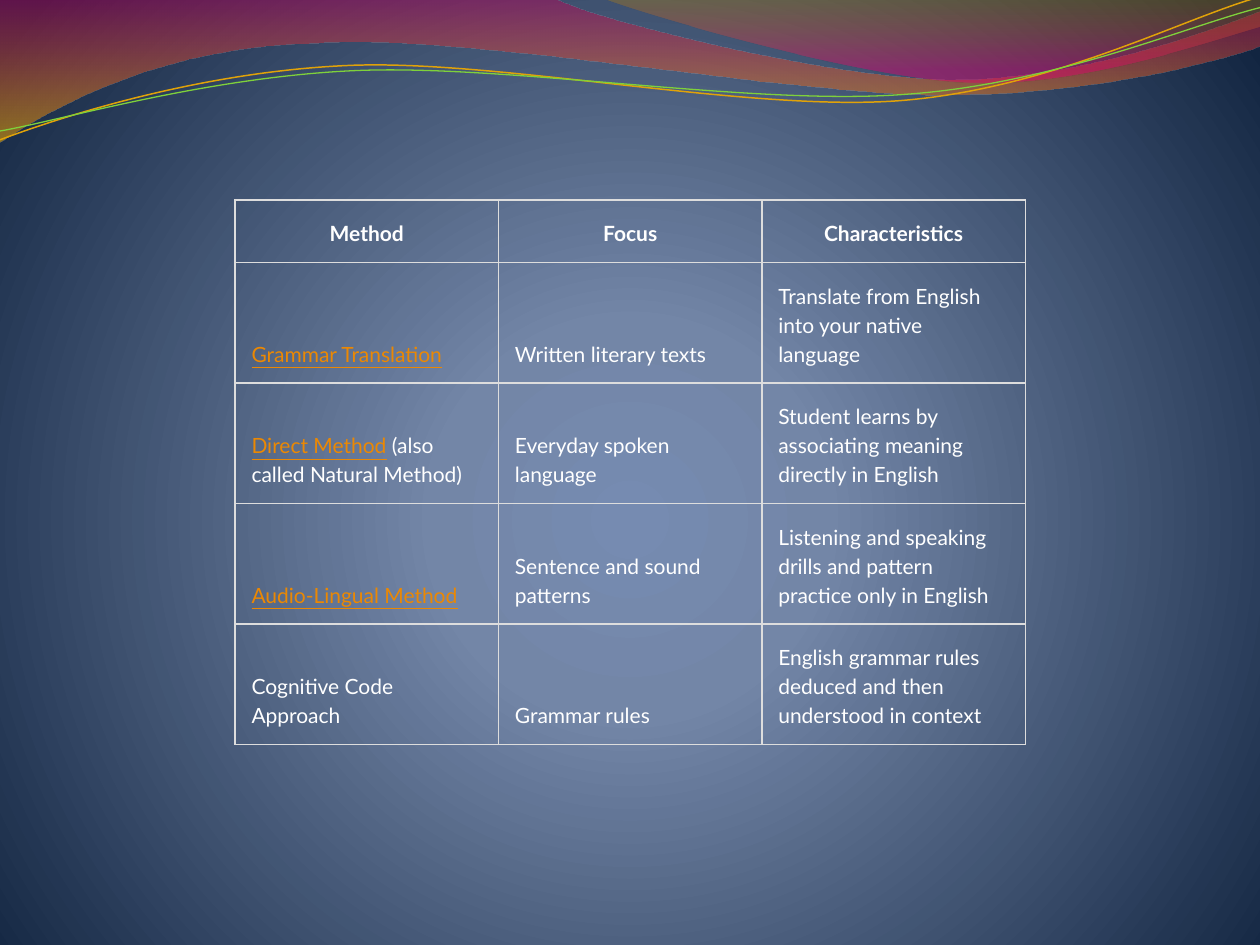
from dataclasses import dataclass
from math import cos, radians, sin

from lxml import etree
from pptx import Presentation
from pptx.dml.color import RGBColor
from pptx.enum.text import MSO_ANCHOR, PP_ALIGN
from pptx.oxml.ns import qn
from pptx.util import Cm, Pt

BOTTOM = MSO_ANCHOR.BOTTOM
CENTER, LEFT = PP_ALIGN.CENTER, PP_ALIGN.LEFT
BLANK_LAYOUT = 6
UNIT = Cm(2.54)  # wave coordinates count one tenth of the page width
CURVE_TILT = -2.7


@dataclass(frozen=True)
class Theme:
    font: str = "Lato"
    text_size: float = 12
    line_spacing: float = 1.15
    text: str = "FFFFFF"
    link: str = "EB8803"
    border: str = "DDDDDD"
    gold_line: str = "E0A209"
    green_line: str = "7FD13B"
    # Gradient stops: position, colour, opacity (all in percent)
    backdrop: tuple = ((0, "768BB1", 100), (25, "7386A7", 100), (100, "122541", 100))
    wide_wave: tuple = ((0, "BD0059", 45), (100, "F0AB00", 55))
    short_wave: tuple = ((0, "C38B00", 30), (80, "E1006B", 45))


THEME = Theme()

# Frames: left, top, width, height
WIDE_FRAME = (-0.01, -0.01, 10.02, 1.14)
SHORT_FRAME = (4.79, -0.01, 5.21, 0.7)
GOLD_FRAME = (-0.02, 0.22, 10.02, 0.71)
GREEN_FRAME = (-0.02, 0.3, 10.03, 0.58)

# Outlines: a start point, then lines (2 numbers) and Bézier curves (6 numbers)
WIDE_WAVE = [
    (0, 0), (4.4, -0.01), (4.76, 0.17, 6.64, 0.63, 7.58, 0.63),
    (8.53, 0.63, 9.58, 0.26, 10, 0.09), (10.01, 0.36),
    (9.83, 0.44, 8.7, 0.76, 7.46, 0.75), (6.22, 0.75, 3.82, 0.28, 2.57, 0.34),
    (1.29, 0.36, 0.46, 0.83, -0.01, 1.13), (0, 0),
]
SHORT_WAVE = [
    (4.79, -0.01), (5.09, 0.11, 6.82, 0.62, 7.69, 0.65),
    (8.56, 0.69, 9.61, 0.32, 10, 0.21), (10, 0), (4.79, -0.01),
]
GOLD_CURVE = [
    (0, 1.11), (0.48, 0.93, 1.58, 0.57, 2.77, 0.52),
    (3.95, 0.47, 5.93, 0.89, 7.13, 0.8), (8.33, 0.71, 9.38, 0.15, 9.98, -0.02),
]
GREEN_CURVE = [
    (0, 1.04), (0.47, 0.96, 1.64, 0.61, 2.83, 0.56),
    (4.03, 0.51, 5.97, 0.84, 7.17, 0.75), (8.36, 0.67, 9.41, 0.21, 10, 0.06),
]

HEADINGS = ["Method", "Focus", "Characteristics"]
# Each row: linked method name, plain rest of the name, focus, characteristics
METHODS = [
    ("Grammar Translation", "", "Written literary texts",
     "Translate from English into your native language"),
    ("Direct Method", " (also called Natural Method)", "Everyday spoken language",
     "Student learns by associating meaning directly in English"),
    ("Audio-Lingual Method", "", "Sentence and sound patterns",
     "Listening and speaking drills and pattern practice only in English"),
    ("", "Cognitive Code Approach", "Grammar rules",
     "English grammar rules deduced and then understood in context"),
]


def add_element(parent, tag, **attributes):
    values = {name: str(value) for name, value in attributes.items()}
    return etree.SubElement(parent, qn(tag), values)


def set_gradient(owner, fill, stops, circle=False):
    fill.gradient()
    gradient = owner.element.find(".//" + qn("a:gradFill"))
    for child in list(gradient):
        gradient.remove(child)
    stop_list = add_element(gradient, "a:gsLst")
    for position, color, opacity in stops:
        stop = add_element(stop_list, "a:gs", pos=position * 1000)
        tint = add_element(stop, "a:srgbClr", val=color)
        if opacity < 100:
            add_element(tint, "a:alpha", val=opacity * 1000)
    if circle:
        focus = add_element(gradient, "a:path", path="circle")
        add_element(focus, "a:fillToRect", l=10000, t=110000, r=10000, b=100000)
    else:
        add_element(gradient, "a:lin", ang=5400000, scaled=0)


def add_outline(page, frame, outline, tilt=0, closed=False):
    """Draw page coordinates as true curves inside a frame that may be tilted."""
    left, top, width, height = frame
    turn = radians(-tilt)

    def add_point(parent, x, y):
        x, y = x - left - width / 2, y - top - height / 2
        level_x = x * cos(turn) - y * sin(turn) + width / 2
        level_y = x * sin(turn) + y * cos(turn) + height / 2
        add_element(parent, "a:pt", x=round(level_x * UNIT), y=round(level_y * UNIT))

    builder = page.shapes.build_freeform()
    builder.add_line_segments([(UNIT, UNIT)], close=closed)
    shape = builder.convert_to_shape()
    shape.left, shape.top, shape.width, shape.height = (round(v * UNIT) for v in frame)
    shape.rotation = tilt
    shape.shadow.inherit = False

    # Replace the straight segment with lines and Bézier curves
    route = shape.element.find(".//" + qn("a:path"))
    for child in list(route):
        route.remove(child)
    route.set("w", str(shape.width))
    route.set("h", str(shape.height))
    add_point(add_element(route, "a:moveTo"), *outline[0])
    for segment in outline[1:]:
        step = add_element(route, "a:lnTo" if len(segment) == 2 else "a:cubicBezTo")
        for index in range(0, len(segment), 2):
            add_point(step, *segment[index:index + 2])
    if closed:
        add_element(route, "a:close")
    return shape


def add_wave(page, frame, outline, stops):
    wave = add_outline(page, frame, outline, closed=True)
    set_gradient(wave, wave.fill, stops)
    wave.line.fill.background()


def add_curve(page, frame, outline, color, width):
    curve = add_outline(page, frame, outline, tilt=CURVE_TILT)
    curve.fill.background()
    curve.line.color.rgb = RGBColor.from_string(color)
    curve.line.width = Pt(width)


def set_borders(cell):
    properties = cell._tc.get_or_add_tcPr()
    for index, side in enumerate(("a:lnL", "a:lnR", "a:lnT", "a:lnB")):
        border = add_element(properties, side, w=Pt(1))
        add_element(add_element(border, "a:solidFill"), "a:srgbClr", val=THEME.border)
        properties.insert(index, border)


def fill_cell(cell, text, link="", heading=False):
    cell.fill.background()
    set_borders(cell)
    cell.vertical_anchor = BOTTOM
    cell.margin_left = cell.margin_right = Cm(0.33)
    cell.margin_top = cell.margin_bottom = Cm(0.33)
    para = cell.text_frame.paragraphs[0]
    para.alignment = CENTER if heading else LEFT
    para.line_spacing = THEME.line_spacing
    for words, linked in ((link, True), (text, False)):
        if not words:
            continue
        span = para.add_run()
        span.text = words
        span.font.name = THEME.font
        span.font.size = Pt(THEME.text_size)
        span.font.bold = heading
        span.font.underline = linked
        span.font.color.rgb = RGBColor.from_string(THEME.link if linked else THEME.text)


def add_methods_table(page):
    table = page.shapes.add_table(
        len(METHODS) + 1, len(HEADINGS), Cm(4.74), Cm(4.03), Cm(15.93), Cm(10.98)).table
    table.first_row = table.horz_banding = False
    for index, row in enumerate(table.rows):
        row.height = Cm(2.43) if index else Cm(1.26)
    for column, heading in enumerate(HEADINGS):
        fill_cell(table.cell(0, column), heading, heading=True)
    for row, (link, name, focus, characteristics) in enumerate(METHODS, start=1):
        fill_cell(table.cell(row, 0), name, link=link)
        fill_cell(table.cell(row, 1), focus)
        fill_cell(table.cell(row, 2), characteristics)


def main():
    deck = Presentation()
    deck.slide_width, deck.slide_height = Cm(25.4), Cm(19.05)
    page = deck.slides.add_slide(deck.slide_layouts[BLANK_LAYOUT])
    # Backdrop and waves
    set_gradient(page, page.background.fill, THEME.backdrop, circle=True)
    add_wave(page, WIDE_FRAME, WIDE_WAVE, THEME.wide_wave)
    add_wave(page, SHORT_FRAME, SHORT_WAVE, THEME.short_wave)
    add_curve(page, GOLD_FRAME, GOLD_CURVE, THEME.gold_line, 0.85)
    add_curve(page, GREEN_FRAME, GREEN_CURVE, THEME.green_line, 0.75)
    # Teaching methods
    add_methods_table(page)
    deck.save("out.pptx")


if __name__ == "__main__":
    main()
